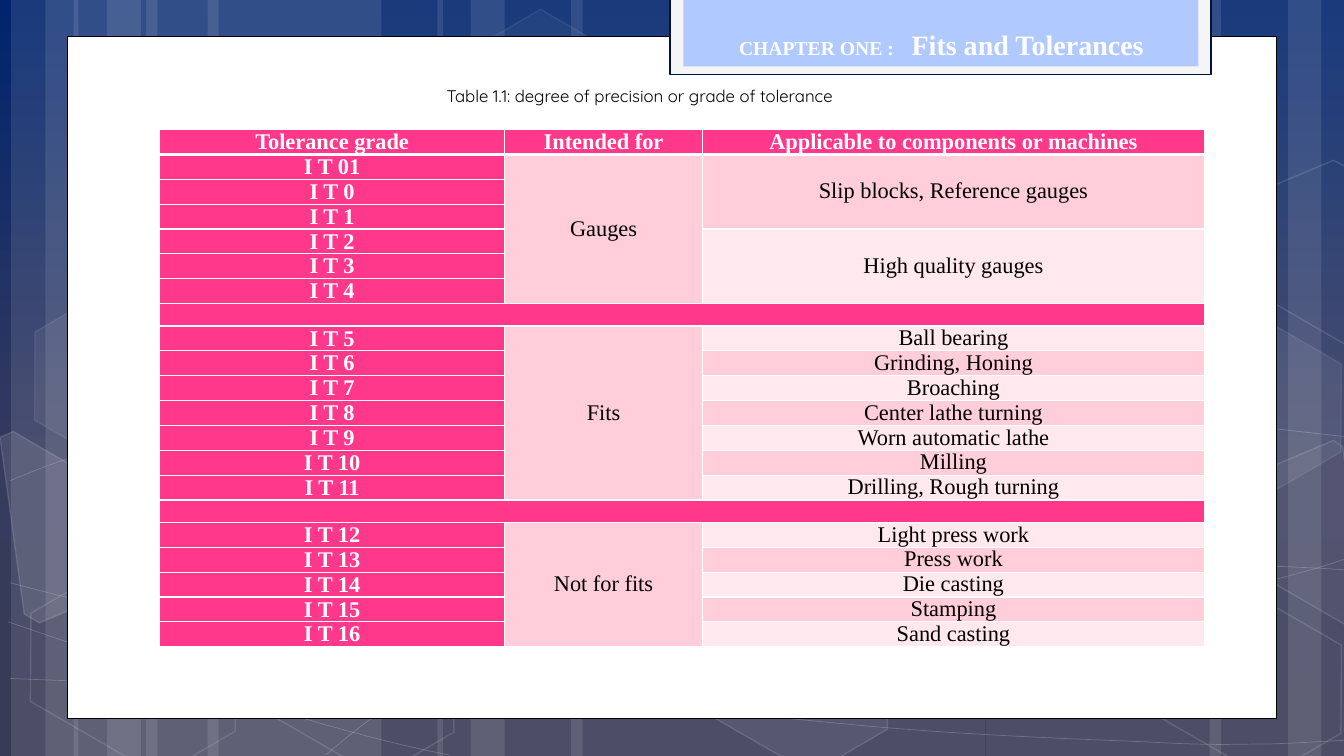
from copy import deepcopy

from lxml import etree
from pptx import Presentation
from pptx.dml.color import RGBColor
from pptx.enum.shapes import MSO_SHAPE
from pptx.enum.text import MSO_ANCHOR, MSO_AUTO_SIZE, PP_ALIGN
from pptx.oxml.ns import qn
from pptx.util import Pt

RECTANGLE, HEXAGON = MSO_SHAPE.RECTANGLE, MSO_SHAPE.HEXAGON
MIDDLE, TOP, BOTTOM = MSO_ANCHOR.MIDDLE, MSO_ANCHOR.TOP, MSO_ANCHOR.BOTTOM
CENTER, LEFT = PP_ALIGN.CENTER, PP_ALIGN.LEFT
NO_AUTOSIZE = MSO_AUTO_SIZE.NONE

WHITE, BLACK, PINK, ROSE, BLUSH = "FFFFFF", "000000", "FF388C", "FFCEDA", "FFE8EE"
SERIF = "Times New Roman"
ROW_HEIGHT, SPACER_HEIGHT = 17.76, 16.1

BACKGROUND_STOPS = [(0, "00246E"), (0.62, "373B5D"), (1, "383B55")]
STRIPES = [  # left, width
    (104.4, 168), (8, 48), (32.4, 80), (148.3, 168), (52.6, 48), (76.3, 80),
    (704.2, 168), (920, 48), (864, 80), (408, 296), (312.5, 48), (336.2, 80)]
CURVES = [  # start point, then cubic segments: two controls and an end
    [(7.2, 484.6), (59, 486.7, 110.9, 488.9, 182.9, 488.2),
     (254.9, 487.4, 343.4, 486, 439.2, 478.8), (535.7, 471.6, 671.8, 457.9, 759.6, 444.2),
     (848.2, 430.6, 938.2, 409, 967, 396.7)],
    [(7.2, 343.4), (34.6, 331.9, 61.9, 321.1, 116.6, 310.3),
     (171.4, 299.5, 248.4, 283.7, 333.4, 278.6), (419, 273.6, 522.7, 272.9, 627.8, 278.6),
     (733.7, 284.4, 909.4, 306.7, 967, 312.5)],
    [(5.8, 444.2), (121.7, 483.8, 237.6, 523.4, 321.1, 539.3)],
    [(7.2, 416.2), (36.7, 424.1, 67, 432, 123.1, 443.5),
     (178.6, 454.3, 262.1, 472.3, 342, 484.6), (421.9, 496.8, 523.4, 509.8, 602.6, 517),
     (682.6, 524.9, 767.5, 527.8, 818.6, 529.9), (869, 532.8, 882, 531.4, 907.2, 531.4),
     (931.7, 530.6, 949.7, 529.2, 967, 528.5)],
    [(232.6, 539.3), (249.8, 524.9, 266.4, 510.5, 290.2, 497.5),
     (313.2, 484.6, 345.6, 470.2, 372.2, 460.1), (398.9, 450, 415.4, 445.7, 450.7, 438.5),
     (486, 431.3, 550.8, 421.2, 583.9, 416.2), (617.8, 411.1, 622.8, 411.1, 653, 409.7),
     (682.6, 407.5, 729.4, 405.4, 762.5, 404.6), (795.6, 403.9, 851, 404.6, 851, 404.6),
     (851, 404.6, 914.4, 404.6, 914.4, 404.6), (932.4, 405.4, 948.2, 406.1, 956.9, 406.8),
     (965.5, 407.5, 962.6, 406.8, 965.5, 407.5)]]
HEXAGONS = [  # left, top, fill opacity, line opacity
    (320.4, 25.9, 4, 8), (476.6, 424.1, 6, 12), (10.8, 425.5, 0, 12), (13.7, 224.6, 7, 8),
    (167, 426.2, 0, 12), (800.6, 427, 0, 12), (800.6, 226.1, 7, 8)]
CUT_HEXAGONS = [  # fill opacity, corners
    (10, [(0, 312.5), (9.4, 308.2), (82.8, 350.6), (91.4, 418.3), (28.1, 445), (17.3, 438.5)]),
    (4, [(889.2, 341.3), (952.6, 314.6), (959, 319), (977, 450), (971.3, 452.2), (897.8, 409.7)]),
    (0, [(889.2, 141.1), (952.6, 114.5), (960.5, 118.8), (977, 249.1), (971.3, 252),
         (897.8, 209.5)])]

HEADINGS = ["Tolerance grade", "Intended for", "Applicable to components or machines"]
GROUPS = [  # purpose, grades, (application, number of grades it covers)
    ("Gauges", ["01", "0", "1", "2", "3", "4"],
     [("Slip blocks, Reference gauges", 3), ("High quality gauges", 3)]),
    ("Fits", range(5, 12),
     [("Ball bearing", 1), ("Grinding, Honing", 1), ("Broaching", 1),
      ("Center lathe turning", 1), ("Worn automatic lathe", 1), ("Milling", 1),
      ("Drilling, Rough turning", 1)]),
    ("Not for fits", range(12, 17),
     [("Light press work", 1), ("Press work", 1), ("Die casting", 1), ("Stamping", 1),
      ("Sand casting", 1)])]


def color(value):
    return RGBColor.from_string(value)


def set_all(target, **values):
    for name, value in values.items():
        setattr(target, name, value)


def apply_fill(fill, parent, value, opacity):
    """Fill solidly; parent is the tag path of the XML element that holds the fill."""
    if not value or not opacity:
        fill.background()
        return
    fill.solid()
    fill.fore_color.rgb = color(value)
    if opacity < 100:
        tone = parent.find(f"{qn('a:solidFill')}/{qn('a:srgbClr')}")
        etree.SubElement(tone, qn("a:alpha"), val=str(opacity * 1000))


def paint(shape, fill=None, line=None, width=1, fill_opacity=100, line_opacity=100):
    shape.shadow.inherit = False
    properties = shape._element.spPr
    apply_fill(shape.fill, properties, fill, fill_opacity)
    shape.line.width = Pt(width)
    apply_fill(shape.line.fill, properties.find(qn("a:ln")), line, line_opacity)


def add_block(page, box, kind=RECTANGLE, **look):
    shape = page.shapes.add_shape(kind, *map(Pt, box))
    paint(shape, **look)
    return shape


def add_outline(page, points, close, **look):
    corners = [(Pt(x), Pt(y)) for x, y in points]
    builder = page.shapes.build_freeform(*corners[0], scale=1.0)
    builder.add_line_segments(corners[1:], close=close)
    shape = builder.convert_to_shape()
    paint(shape, line=WHITE, **look)
    return shape


def add_curve(page, start, *segments):
    """Draw the control polygon, then turn each three of its lines into one cubic segment."""
    points = [start] + [part[i:i + 2] for part in segments for i in (0, 2, 4)]
    shape = add_outline(page, points, False, width=0.5, line_opacity=20)
    lines = list(shape._element.iter(qn("a:lnTo")))
    for first, second, third in zip(lines[::3], lines[1::3], lines[2::3]):
        first.addprevious(bend := etree.Element(qn("a:cubicBezTo")))
        for line in (first, second, third):
            bend.append(line[0])
            line.getparent().remove(line)


def add_backdrop(page, width, height):
    fill = page.background.fill
    fill.gradient()
    fill.gradient_angle = 270
    stops = page._element.find(".//" + qn("a:gsLst"))
    stops.append(deepcopy(stops[0]))
    for stop, (position, value) in zip(fill.gradient_stops, BACKGROUND_STOPS):
        stop.position = position
        stop.color.rgb = color(value)
    for left, stripe_width in STRIPES:
        add_block(page, (left, 0, stripe_width, height), fill=WHITE, fill_opacity=10)
    for curve in CURVES:
        add_curve(page, *curve)
    for left, top, fill_opacity, line_opacity in HEXAGONS:
        shape = add_block(page, (left, top, 168.5, 109.4), HEXAGON, fill=WHITE, line=WHITE,
                          fill_opacity=fill_opacity, line_opacity=line_opacity)
        shape.rotation = 30
        shape.adjustments[0], shape.adjustments[1] = 0.285, 1.155
    for opacity, corners in CUT_HEXAGONS:
        add_outline(page, corners, True, fill=WHITE, fill_opacity=opacity, line_opacity=12)
    add_block(page, (48, 26, width - 96, height - 53), fill=WHITE, line=BLACK, width=0.5)


def write(para, text, size, value=BLACK, bold=False, font=SERIF):
    span = para.add_run()
    span.text = text
    set_all(span.font, size=Pt(size), bold=bold, name=font)
    span.font.color.rgb = color(value)


def add_chapter_tab(page, left, top, width, height):
    add_block(page, (left, top, width, height), fill="F5F5F5", line="00133B", width=1.25)
    add_block(page, (left + 9.4, top, width - 18.4, height - 5.8), fill="B0C9FF")
    title = page.shapes.title
    page.shapes._spTree.append(title._element)
    set_all(title, left=Pt(left - 26.6), top=Pt(top - 15.9), width=Pt(440.6), height=Pt(67.7))
    set_all(title.text_frame, vertical_anchor=BOTTOM, word_wrap=True, auto_size=NO_AUTOSIZE)
    para = title.text_frame.paragraphs[0]
    set_all(para, alignment=CENTER, line_spacing=2.0)
    for text, size in (("CHAPTER ONE : ", 14), (" ", 36), ("Fits and Tolerances", 20)):
        write(para, text, size, WHITE, True)


def add_caption(page, *box):
    frame = page.shapes.add_textbox(*map(Pt, box)).text_frame
    frame.word_wrap = True
    frame.paragraphs[0].alignment = LEFT
    write(frame.paragraphs[0], "Table 1.1: degree of precision or grade of tolerance", 12,
          font="Quicksand")


def style_cell(cell, fill, is_header):
    set_all(cell, margin_left=Pt(5), margin_right=Pt(5), margin_top=0, margin_bottom=0)
    properties = cell._tc.get_or_add_tcPr()
    for side in "LRTB":
        width = Pt(3) if is_header and side == "B" else Pt(1)
        border = etree.SubElement(properties, qn(f"a:ln{side}"), w=str(width))
        solid = etree.SubElement(border, qn("a:solidFill"))
        etree.SubElement(solid, qn("a:srgbClr"), val=WHITE)
    cell.fill.solid()
    cell.fill.fore_color.rgb = color(fill)
    para = cell.text_frame.paragraphs[0]
    set_all(para, alignment=CENTER, line_spacing=0.96)
    etree.SubElement(para._p, qn("a:endParaRPr"), sz="800")


def fill_cell(cell, text, value=BLACK, bold=False, anchor=MIDDLE):
    cell.vertical_anchor = anchor
    write(cell.text_frame.paragraphs[0], text, 16, value, bold)


def add_grade_table(page, left, top, widths):
    count = sum(len(grades) + 1 for _, grades, _ in GROUPS)
    table = page.shapes.add_table(count, 3, Pt(left), Pt(top), Pt(sum(widths)),
                                  Pt(count * ROW_HEIGHT)).table
    for column, width in zip(table.columns, widths):
        column.width = Pt(width)
    for index, row in enumerate(table.rows):
        row.height = Pt(ROW_HEIGHT)
        fills = (PINK, ROSE, ROSE if index % 2 else BLUSH) if index else (PINK,) * 3
        for cell, fill in zip(row.cells, fills):
            style_cell(cell, fill, index == 0)
    for column, heading in enumerate(HEADINGS):
        fill_cell(table.cell(0, column), heading, WHITE, True)
    start = 1
    for purpose, grades, applications in GROUPS:
        end = start + len(grades)
        for row, grade in enumerate(grades, start):
            fill_cell(table.cell(row, 0), f"I T {grade}", WHITE, True, BOTTOM if row > 1 else MIDDLE)
        table.cell(start, 1).merge(table.cell(end - 1, 1))
        fill_cell(table.cell(start, 1), purpose)
        row = start
        for application, span in applications:
            if span > 1:
                table.cell(row, 2).merge(table.cell(row + span - 1, 2))
            fill_cell(table.cell(row, 2), application)
            row += span
        if end < count:
            table.rows[end].height = Pt(SPACER_HEIGHT)
            table.cell(end, 0).merge(table.cell(end, 2))
            for column in range(3):
                table.cell(end, column).fill.fore_color.rgb = color(PINK)
        start = end + 1


def main():
    deck = Presentation()
    set_all(deck, slide_width=Pt(960), slide_height=Pt(540))
    page = deck.slides.add_slide(deck.slide_layouts[5])
    add_backdrop(page, 960, 540)
    add_chapter_tab(page, 478.8, -1.4, 386.2, 54.7)
    add_grade_table(page, 114, 92.6, (246.5, 141.3, 358.6))
    add_caption(page, 312, 57.6, 319, 21.6)
    deck.save("out.pptx")


if __name__ == "__main__":
    main()
